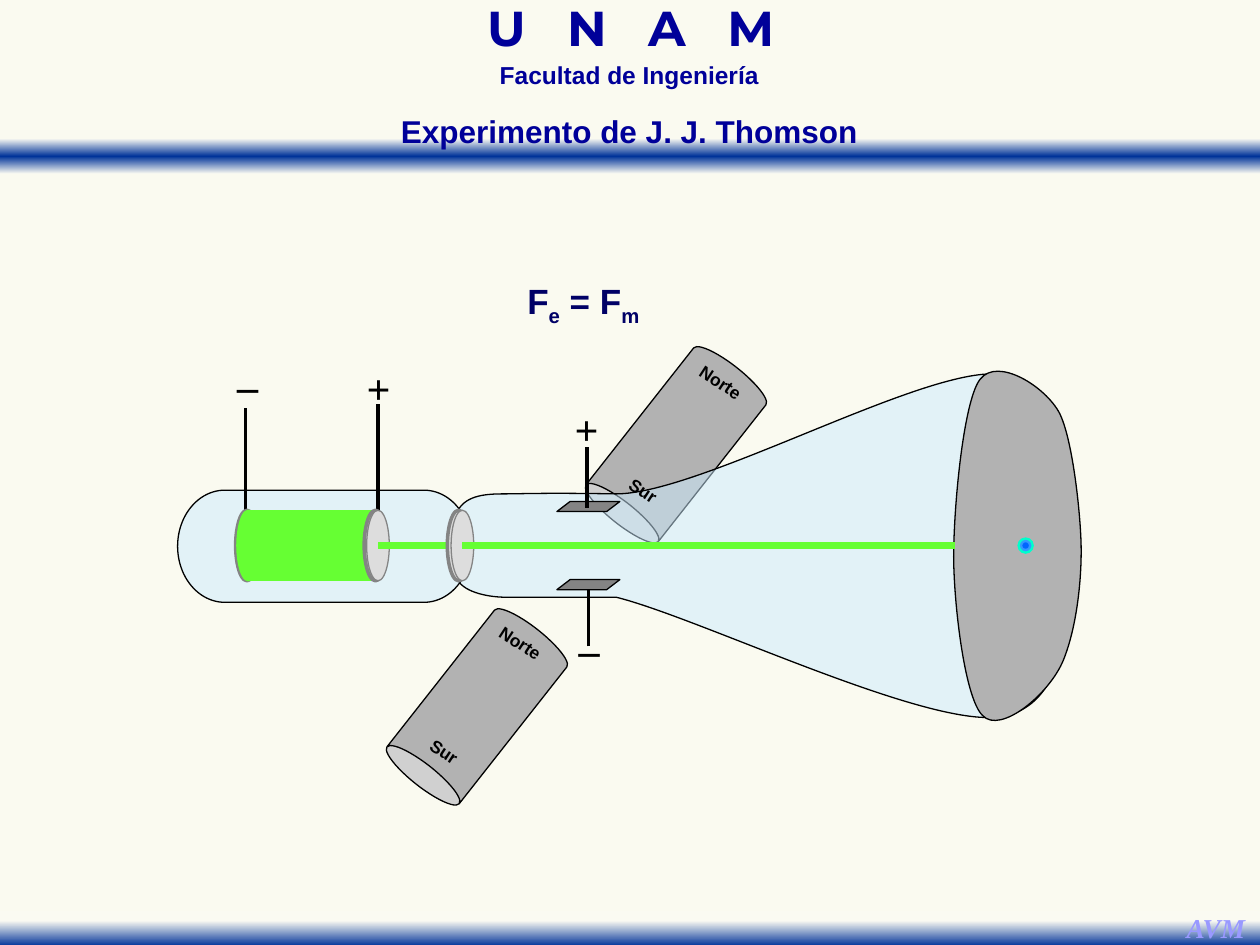
import lxml.etree
import pptx
import pptx.dml.color
import pptx.enum.shapes
import pptx.enum.text
import pptx.oxml
import pptx.oxml.ns
import pptx.util

Inches = pptx.util.Inches
Pt = pptx.util.Pt
MSO = pptx.enum.shapes.MSO_SHAPE
qn = pptx.oxml.ns.qn

COLORS = {
    "paper": "FAFAF0", "fade": "FAFAF2", "band": "003399", "title": "000099",
    "navy": "000066", "initials": "9999FF", "black": "000000", "glass": "CCECFF",
    "magnet": "B2B2B2", "disc": "DDDDDD", "metal": "848484", "beam": "66FF33",
    "glow": "00FFCC", "spot": "3399FF", "core": "0066FF",
}


def rgb(name):
    return pptx.dml.color.RGBColor.from_string(COLORS[name])


class Slide:
    def __init__(self, prs):
        self.slide = prs.slides.add_slide(prs.slide_layouts[6])
        self.shapes = self.slide.shapes
        self.font = {"name": "Arial", "bold": True}
        fill = self.slide.background.fill
        fill.solid()
        fill.fore_color.rgb = rgb("paper")

    def paint(self, sp, fill, line="black", width=0.75, alpha=None):
        sp.shadow.inherit = False
        sp.fill.solid()
        sp.fill.fore_color.rgb = rgb(fill)
        sp.line.color.rgb = rgb(line)
        sp.line.width = Pt(width)
        if alpha:
            color = sp._element.spPr.find(qn("a:solidFill"))[0]
            lxml.etree.SubElement(color, qn("a:alpha")).set("val", str(alpha * 1000))
        return sp

    def shape(self, kind, box, fill, line="black", width=0.75, alpha=None,
              adj=None, rotation=0):
        sp = self.shapes.add_shape(kind, *map(Inches, box))
        if adj is not None:
            sp.adjustments[0] = adj
        sp.rotation = rotation
        return self.paint(sp, fill, line, width, alpha)

    def band(self, top, stops):
        sp = self.shapes.add_shape(MSO.RECTANGLE, *map(Inches, (0, top, 10, 0.28)))
        sp.shadow.inherit = False
        sp.line.fill.background()
        sp.fill.gradient()
        sp.fill.gradient_angle = 270
        stop_list = sp._element.spPr.find(qn("a:gradFill")).find(qn("a:gsLst"))
        for old in list(stop_list):
            stop_list.remove(old)
        for position, name in stops:
            gs = lxml.etree.SubElement(stop_list, qn("a:gs"), pos=str(position * 1000))
            lxml.etree.SubElement(gs, qn("a:srgbClr"), val=COLORS[name])

    def outline(self, box, start, curves, fill, alpha=None):
        """A closed outline of cubic curves, each with two handles and an end."""
        left, top, width, height = map(Inches, box)
        builder = self.shapes.build_freeform(*map(Inches, start), scale=1.0)
        builder.add_line_segments([(Inches(c[4]), Inches(c[5])) for c in curves])
        sp = builder.convert_to_shape()
        sp.left, sp.top, sp.width, sp.height = left, top, width, height
        route = next(sp._element.iter(qn("a:path")))
        for child in list(route):
            route.remove(child)
        route.set("w", str(width))
        route.set("h", str(height))
        for tag, numbers in [("a:moveTo", start)] + [("a:cubicBezTo", c) for c in curves]:
            step = lxml.etree.SubElement(route, qn(tag))
            for x, y in zip(numbers[::2], numbers[1::2]):
                lxml.etree.SubElement(step, qn("a:pt"), x=str(Inches(x) - left),
                                      y=str(Inches(y) - top))
        lxml.etree.SubElement(route, qn("a:close"))
        self.paint(sp, fill, alpha=alpha)

    def line(self, x1, y1, x2, y2, color="black", width=2, target=None):
        cx = self.shapes.add_connector(
            pptx.enum.shapes.MSO_CONNECTOR.STRAIGHT, *map(Inches, (x1, y1, x2, y2)))
        cx.line.color.rgb = rgb(color)
        cx.line.width = Pt(width)
        lxml.etree.SubElement(cx._element.spPr, qn("a:effectLst"))
        if target is not None:
            cx.end_connect(target, 1)

    def text(self, box, runs, size, color="black", wrap=False, spacing=None,
             rotation=0, **style):
        """Each run is a pair: its words and its extra run attributes."""
        sp = self.shapes.add_textbox(*map(Inches, box))
        sp.rotation = rotation
        tf = sp.text_frame
        tf.word_wrap = wrap
        p = tf.paragraphs[0]
        p.alignment = pptx.enum.text.PP_ALIGN.CENTER
        if spacing:
            p.line_spacing = spacing
        if isinstance(runs, str):
            runs = [(runs, {})]
        for words, attributes in runs:
            r = p.add_run()
            r.text = words
            for key, value in {**self.font, "size": Pt(size), **style}.items():
                setattr(r.font, key, value)
            r.font.color.rgb = rgb(color)
            for key, value in attributes.items():
                r._r.get_or_add_rPr().set(key, value)

    def sign(self, symbol, left, top):
        width = 0.39 if symbol == "+" else 0.37
        self.text((left, top, width, 0.5), symbol, 24, name="Times New Roman")

    def magnet(self, left, top):
        self.shape(MSO.CAN, (left, top, 0.73, 1.56), "magnet", adj=0.244, rotation=218.2)

    def pole(self, name, left, top):
        width = 0.56 if name == "Norte" else 0.43
        self.text((left, top, width, 0.27), name, 10, rotation=33.2)

    def disc(self, left, fill="disc", line="metal", width=0.75):
        self.shape(MSO.OVAL, (left, 4.05, 0.18, 0.56), fill, line, width)

    def anode(self, left, front_left, hole_left):
        self.disc(left, width=2)
        self.disc(front_left)
        return self.shape(MSO.RECTANGLE, (hole_left, 4.31, 0.02, 0.04),
                          "navy", width=0.5)

    def plate(self, top):
        self.shape(MSO.PARALLELOGRAM, (4.42, top, 0.5, 0.08), "metal", adj=1.312)


def main():
    prs = pptx.Presentation()
    prs.slide_width, prs.slide_height = Inches(10), Inches(7.5)
    s = Slide(prs)

    # Header and footer
    s.band(1.1, [(0, "fade"), (50, "band"), (100, "fade")])
    s.text((3.05, 0.06, 3.91, 0.43), [("U N A ", {"spc": "790"}), ("M", {})],
           28, "title", wrap=True, spacing=0.7, name="Montserrat")
    s.text((3.21, 0.49, 3.57, 0.27), "Facultad de Ingeniería", 14, "title",
           wrap=True, spacing=0.7)
    s.band(7.23, [(28, "fade"), (100, "band")])
    s.text((9.31, 7.18, 0.68, 0.37), "AVM", 15.6, "initials",
           name="Times New Roman", italic=True)

    # Rear magnet and glass tube
    s.magnet(5, 2.75)
    s.outline((3.63, 2.91, 4.89, 2.85), (3.63, 4.06), [
        (3.69, 3.94, 3.83, 3.92, 3.99, 3.92), (4.14, 3.92, 4.3, 3.91, 4.89, 3.92),
        (5.56, 3.92, 7.33, 2.91, 7.93, 2.97), (8.53, 3.02, 8.49, 3.8, 8.49, 4.25),
        (8.49, 4.71, 8.53, 5.61, 7.93, 5.69), (7.33, 5.77, 5.54, 4.9, 4.89, 4.74),
        (4.32, 4.74, 4.12, 4.74, 4.01, 4.74), (3.9, 4.74, 3.69, 4.71, 3.63, 4.6),
    ], "glass", alpha=50)
    s.shape(MSO.FLOWCHART_TERMINATOR, (1.41, 3.89, 2.33, 0.89), "glass", alpha=50)

    # Cathode, anodes and first part of the beam
    s.line(1.95, 4.06, 1.95, 3.24)
    s.line(3, 4.06, 3, 3.21)
    s.disc(1.87, width=2)
    s.sign("+", 2.81, 2.83)
    s.sign("_", 1.78, 2.69)
    s.disc(1.88, "beam", "beam")
    s.shape(MSO.RECTANGLE, (1.99, 4.05, 0.98, 0.56), "beam", "beam")
    first_hole = s.anode(2.89, 2.91, 3)
    s.line(3.72, 4.33, 3, 4.33, "beam", 4, first_hole)
    second_hole = s.anode(3.55, 3.58, 3.67)

    # Deflecting plates
    s.plate(3.98)
    s.line(4.66, 4.03, 4.66, 3.55)
    s.line(4.67, 5.13, 4.67, 4.66)
    s.plate(4.6)
    s.sign("+", 4.46, 3.15)
    s.sign("_", 4.49, 4.79)
    s.pole("Sur", 4.89, 3.76)

    # Screen
    s.outline((7.56, 2.83, 1.03, 3), (7.57, 4.35), [
        (7.58, 3.89, 7.66, 3.16, 7.78, 3.01), (7.92, 2.83, 8.3, 3.07, 8.41, 3.28),
        (8.51, 3.48, 8.57, 4.02, 8.58, 4.29), (8.59, 4.57, 8.55, 4.97, 8.44, 5.24),
        (8.33, 5.51, 7.94, 5.83, 7.8, 5.68), (7.65, 5.54, 7.56, 4.71, 7.57, 4.35),
    ], "magnet")

    # Front magnet and pole names
    s.magnet(3.42, 4.83)
    s.pole("Norte", 3.85, 4.97)
    s.pole("Sur", 3.31, 5.83)
    s.pole("Norte", 5.44, 2.9)

    # Spot on the screen
    for size, color in ((0.12, "glow"), (0.08, "spot"), (0.04, "core")):
        s.shape(MSO.OVAL, (8.14 - size / 2, 4.33 - size / 2, size, size), color, color)

    # Formula, main beam and title
    sub = {"baseline": "-25000"}
    s.text((4.07, 2.17, 1.12, 0.43),
           [("F", {}), ("e", sub), (" = F", {}), ("m", sub)], 20, "navy")
    s.line(7.58, 4.33, 3.67, 4.33, "beam", 4, second_hole)
    s.text((2.83, 0.84, 4.33, 0.4), "Experimento de J. J. Thomson", 18, "title",
           wrap=True)

    prs.save("out.pptx")


if __name__ == "__main__":
    main()
